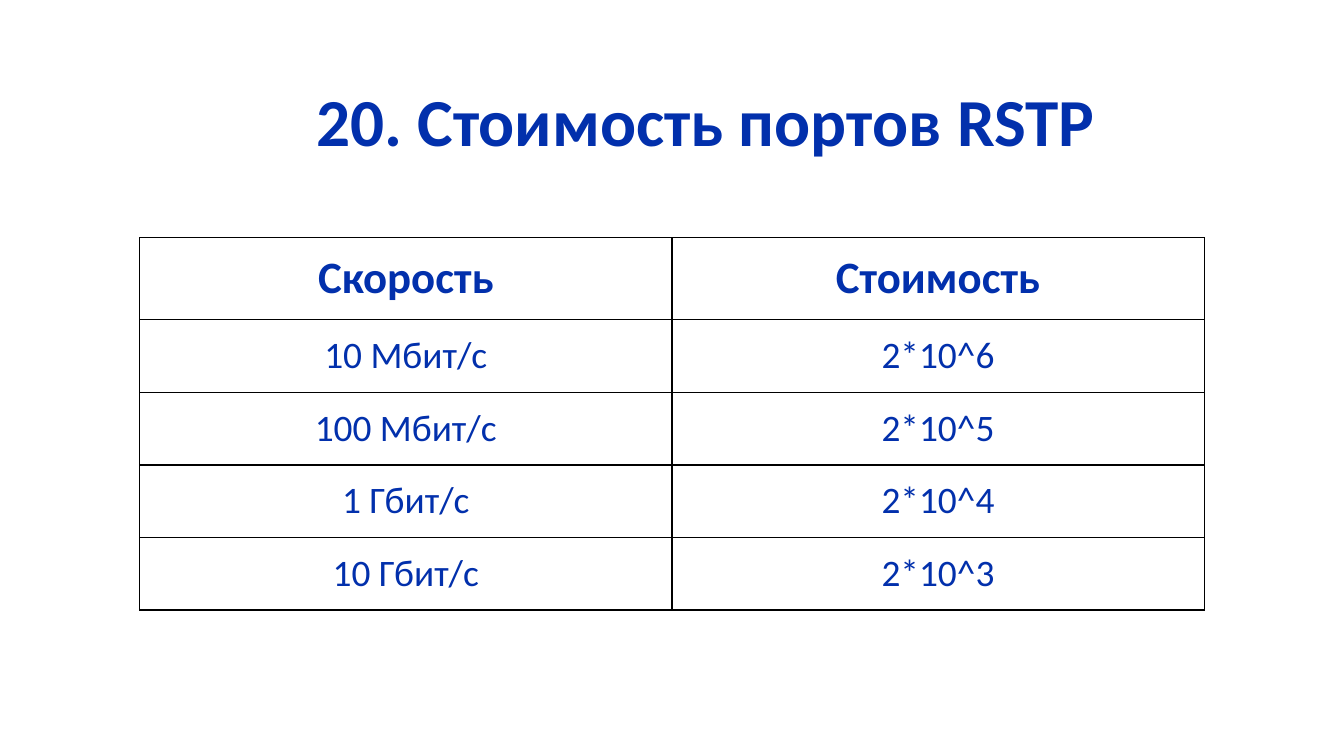
from dataclasses import dataclass

from lxml import etree
from pptx import Presentation
from pptx import util as u
from pptx.dml.color import RGBColor
from pptx.enum import text
from pptx.oxml import ns

HUES = {"blue": "0230AC", "white": "FFFFFF", "black": "000000"}
WIDE = u.Inches(10)
PAD = u.Inches(0.1)
FRAME = {f"margin_{side}": PAD for side in ("left", "right", "top", "bottom")}


@dataclass
class Row:
    speed: str
    cost: str
    tall: float = 0.54
    size: int = 20
    bold: bool = False


ROWS = [
    Row("Скорость", "Стоимость", 0.61, 24, True),
    Row("10 Мбит/c", "2*10^6"),
    Row("100 Мбит/c", "2*10^5"),
    Row("1 Гбит/c", "2*10^4"),
    Row("10 Гбит/c", "2*10^3"),
]


def apply(item, values: dict) -> None:
    for name, value in values.items():
        setattr(item, name, value)


def write(para, words: str, size: int, bold: bool) -> None:
    para.alignment = text.PP_ALIGN.CENTER
    run = para.add_run()
    run.text = words
    apply(run.font, {"name": "Calibri", "size": u.Pt(size), "bold": bold})
    run.font.color.rgb = RGBColor.from_string(HUES["blue"])


def border(cell) -> None:
    props = cell._tc.get_or_add_tcPr()
    for spot, side in enumerate(("lnL", "lnR", "lnT", "lnB")):
        line = etree.Element(ns.qn(f"a:{side}"), w=str(u.Pt(0.75)))
        fill = etree.SubElement(line, ns.qn("a:solidFill"))
        etree.SubElement(fill, ns.qn("a:srgbClr"), val=HUES["black"])
        props.insert(spot, line)


def add_title(slide, words: str) -> None:
    box = slide.shapes.add_textbox(
        u.Inches(0.34), u.Inches(0.49), u.Inches(9.32), u.Inches(0.63))
    frame = box.text_frame
    apply(frame, {**FRAME, "word_wrap": True})
    para = frame.paragraphs[0]
    para._p.get_or_add_pPr().set("marL", str(u.Inches(0.5)))
    write(para, words, 36, True)


def add_costs(slide, rows: list[Row]) -> None:
    tall = sum(row.tall for row in rows)
    grid = slide.shapes.add_table(
        len(rows), 2, u.Inches(1.04), u.Inches(1.77), u.Inches(7.92), u.Inches(tall)).table
    apply(grid, {"first_row": False, "horz_banding": False})
    for line, row in zip(grid.rows, rows):
        line.height = u.Inches(row.tall)
        for cell, words in zip(line.cells, (row.speed, row.cost)):
            apply(cell, FRAME)
            cell.fill.solid()
            cell.fill.fore_color.rgb = RGBColor.from_string(HUES["white"])
            border(cell)
            write(cell.text_frame.paragraphs[0], words, row.size, row.bold)


def main() -> None:
    """Build the slide of RSTP port costs."""
    deck = Presentation()
    apply(deck, {"slide_width": WIDE, "slide_height": WIDE * 9 // 16})
    slide = deck.slides.add_slide(deck.slide_layouts[6])
    add_title(slide, "20. Стоимость портов RSTP")
    add_costs(slide, ROWS)
    deck.save("out.pptx")


if __name__ == "__main__":
    main()
